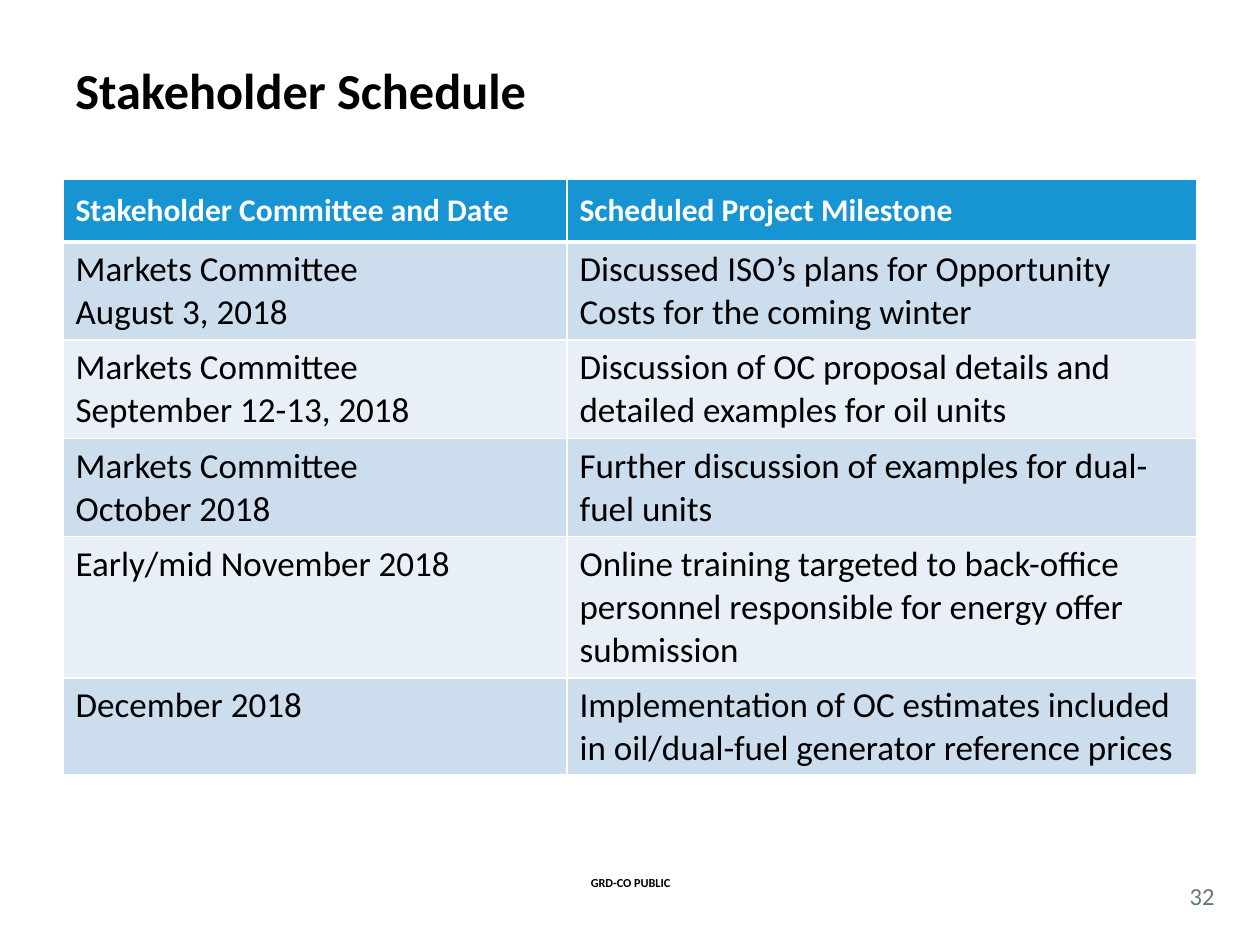
from lxml import etree
from pptx import Presentation
from pptx.dml.color import RGBColor
from pptx.enum.text import MSO_ANCHOR, PP_ALIGN
from pptx.oxml.ns import qn
from pptx.util import Inches, Pt

LEFT, CENTER = PP_ALIGN.LEFT, PP_ALIGN.CENTER
TOP, MIDDLE = MSO_ANCHOR.TOP, MSO_ANCHOR.MIDDLE

COLORS = {"head": "1795D2", "odd": "CCDDEE", "even": "E8EFF7",
          "white": "FFFFFF", "black": "000000", "gray": "62777F"}

# text, (left, top, width, height), inset, align, font
LABELS = [
    ("GRD-CO PUBLIC", (4.27, 6.92, 1.47, 0.17), None, CENTER,
     {"size": Pt(7), "bold": True, "color": "black"}),
    ("Stakeholder Schedule", (0.5, 0.42, 9, 0.58), None, LEFT,
     {"size": Pt(28.8), "bold": True, "color": "black"}),
    ("32", (9.33, 6.96, 0.42, 0.29), 0, CENTER,
     {"size": Pt(14), "bold": False, "color": "gray"}),
]

# row height, date cell, milestone cell
ROWS = [
    (0.5, "Stakeholder Committee and Date", "Scheduled Project Milestone"),
    (0.78, "Markets Committee\nAugust 3, 2018",
     "Discussed ISO’s plans for Opportunity Costs for the coming winter"),
    (0.78, "Markets Committee\nSeptember 12-13, 2018",
     "Discussion of OC proposal details and detailed examples for oil units"),
    (0.78, "Markets Committee\nOctober 2018",
     "Further discussion of examples for dual-fuel units"),
    (1.12, "Early/mid November 2018",
     "Online training targeted to back-office personnel responsible for "
     "energy offer submission"),
    (0.77, "December 2018",
     "Implementation of OC estimates included in oil/dual-fuel generator "
     "reference prices"),
]
COLS = (4, 5)
HEAD = {"size": Pt(18), "bold": True, "color": "white"}
BODY = {"size": Pt(20), "bold": False, "color": "black"}


def rgb(name):
    return RGBColor.from_string(COLORS[name])


def write(frame, text, font, align=LEFT):
    frame.text = text
    for para in frame.paragraphs:
        para.alignment = align
        for run in para.runs:
            run.font.name = "Calibri"
            for key, value in font.items():
                if key == "color":
                    run.font.color.rgb = rgb(value)
                else:
                    setattr(run.font, key, value)


def add_label(slide, text, box, inset, align, font):
    frame = slide.shapes.add_textbox(*map(Inches, box)).text_frame
    frame.word_wrap = True
    frame.vertical_anchor = MIDDLE
    if inset is not None:
        for side in ("left", "top", "right", "bottom"):
            setattr(frame, f"margin_{side}", Inches(inset))
    write(frame, text, font, align)


def add_rules(cell, below):
    """Draw white cell borders; below is the width of the bottom one."""
    props = cell._tc.get_or_add_tcPr()
    widths = {"lnL": 1, "lnR": 1, "lnT": 1, "lnB": below}
    for spot, (tag, width) in enumerate(widths.items()):
        line = etree.Element(qn(f"a:{tag}"), w=str(Pt(width)))
        fill = etree.SubElement(line, qn("a:solidFill"))
        etree.SubElement(fill, qn("a:srgbClr"), val=COLORS["white"])
        props.insert(spot, line)


def add_schedule(slide):
    high = sum(row[0] for row in ROWS)
    table = slide.shapes.add_table(
        len(ROWS), len(COLS), Inches(0.5), Inches(1.42),
        Inches(sum(COLS)), Inches(high)).table
    for col, width in zip(table.columns, COLS):
        col.width = Inches(width)
    for r, (height, *texts) in enumerate(ROWS):
        table.rows[r].height = Inches(height)
        shade = "head" if r == 0 else "odd" if r % 2 else "even"
        for c, text in enumerate(texts):
            cell = table.cell(r, c)
            write(cell.text_frame, text, BODY if r else HEAD)
            cell.vertical_anchor = TOP if r and c == 0 else MIDDLE
            cell.fill.solid()
            cell.fill.fore_color.rgb = rgb(shade)
            # The top border of the first body row shares the header's rule.
            add_rules(cell, 1 if r else 3)
            if r == 1:
                cell._tc.tcPr.find(qn("a:lnT")).set("w", str(Pt(3)))


def main():
    deck = Presentation()
    deck.slide_width, deck.slide_height = Inches(10), Inches(7.5)
    slide = deck.slides.add_slide(deck.slide_layouts[6])
    for label in LABELS:
        add_label(slide, *label)
    add_schedule(slide)
    deck.save("out.pptx")


if __name__ == "__main__":
    main()
